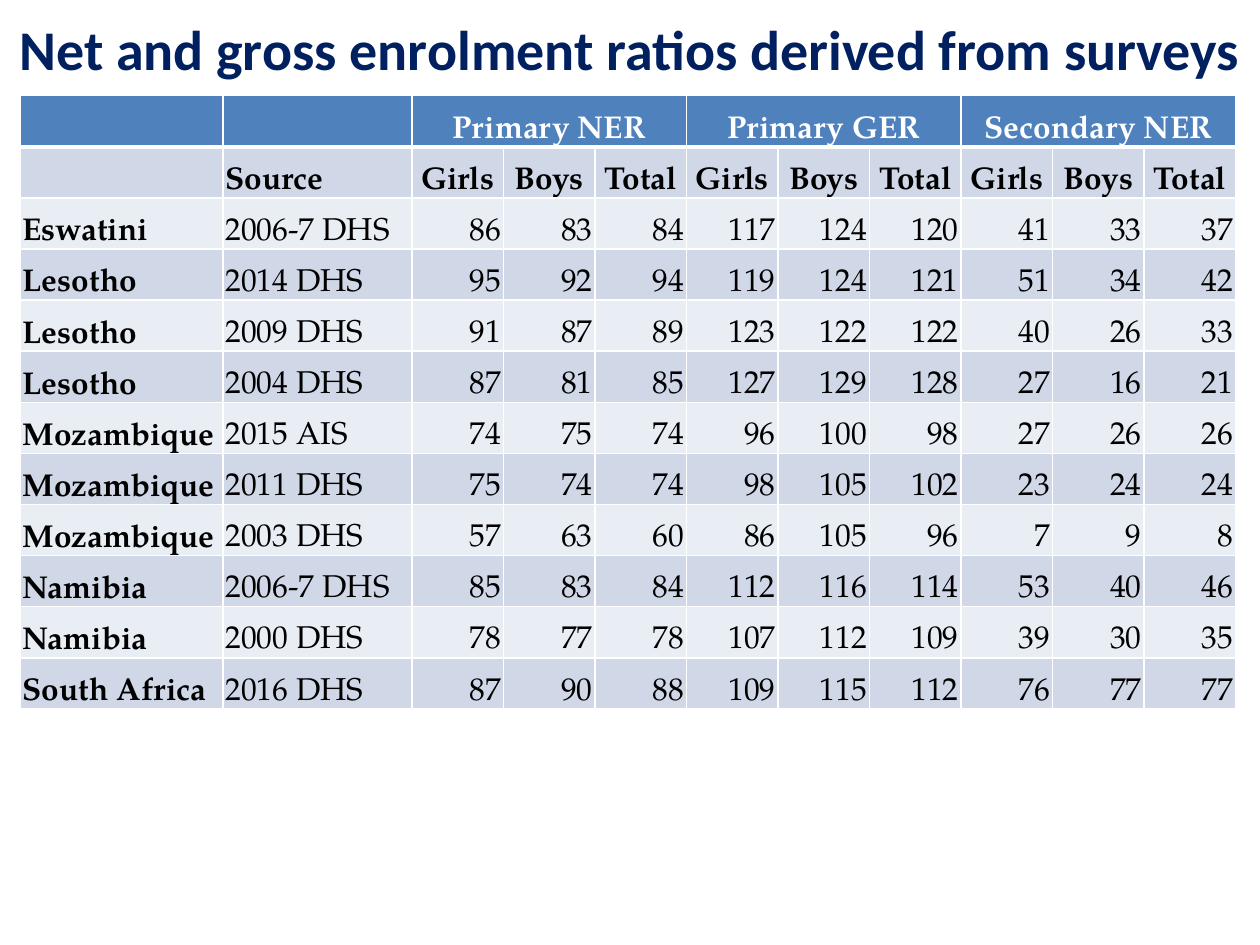
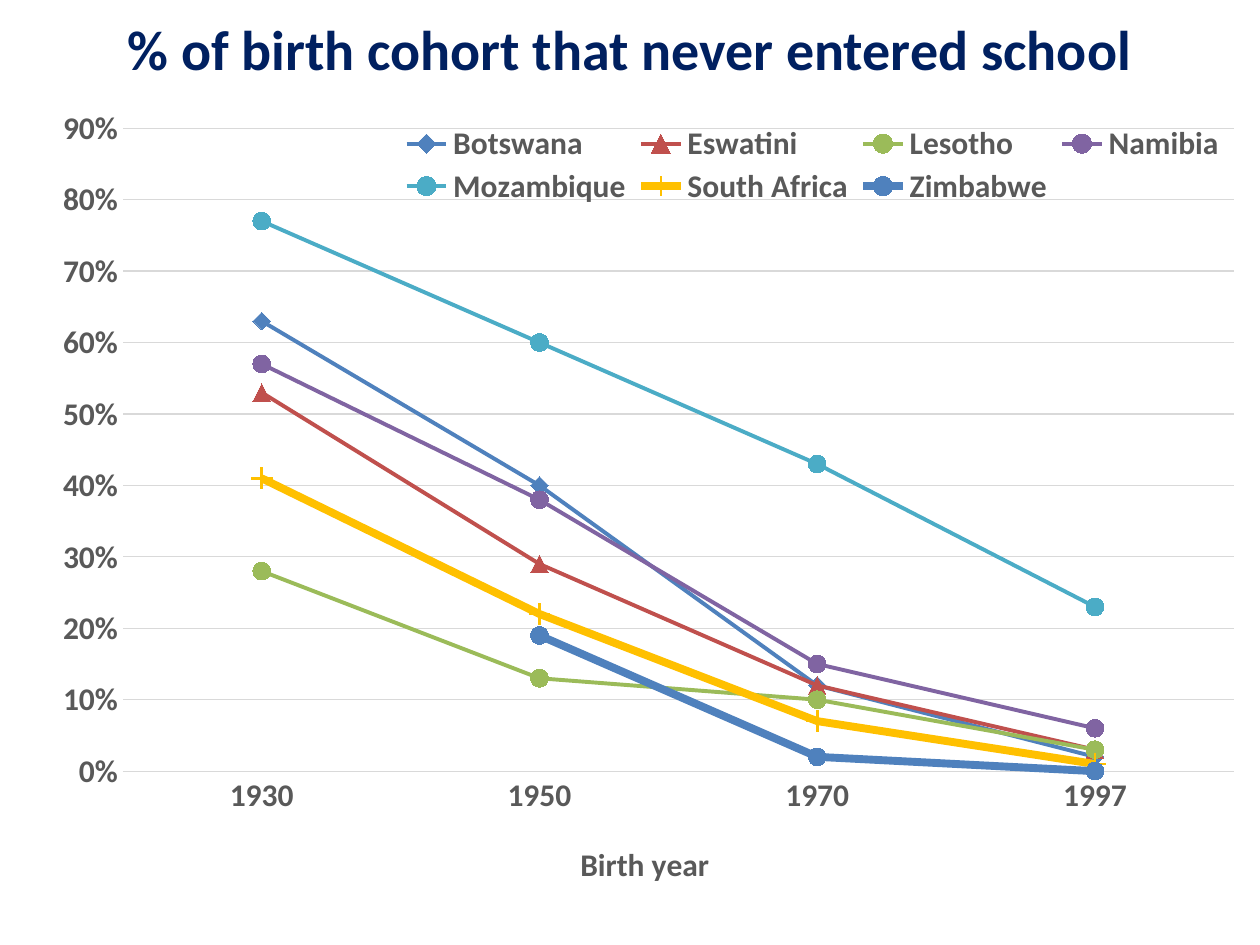
"""Build two slides on school enrolment and attendance in southern Africa."""
from typing import NamedTuple, Optional

from lxml.etree import SubElement
from pptx import Presentation
from pptx.chart.data import CategoryChartData
from pptx.dml.color import RGBColor
from pptx.enum.chart import (XL_CHART_TYPE as ChartType, XL_LEGEND_POSITION as LegendPos,
                             XL_MARKER_STYLE as Marker, XL_TICK_MARK as Tick)
from pptx.enum.text import MSO_ANCHOR as Anchor, PP_ALIGN as Align
from pptx.oxml import parse_xml
from pptx.oxml.ns import nsdecls, qn
from pptx.util import Inches, Pt

HEADING_FONT, TABLE_FONT = "Calibri", "TeX Gyre Pagella"
NAVY, WHITE, BLACK, GREY, PALE_GREY = "002060", "FFFFFF", "000000", "595959", "D9D9D9"
BLUE, BAND_DARK, BAND_LIGHT = "4F81BD", "D0D8E8", "E9EDF4"
BODY_SIZE = 18
TOP = 0.76


class SurveyRow(NamedTuple):
    country: str
    source: str
    ratios: tuple[int, ...]


class Cohort(NamedTuple):
    country: str
    shares: tuple[Optional[float], ...]
    color: str
    marker: Marker = Marker.CIRCLE
    width: float = 2.25
    marker_size: int = 10
    marker_fill: Optional[str] = None


INDICATORS = ("Primary NER", "Primary GER", "Secondary NER")
GROUPS = ("Girls", "Boys", "Total")
SURVEYS = (
    SurveyRow("Eswatini", "2006-7 DHS", (86, 83, 84, 117, 124, 120, 41, 33, 37)),
    SurveyRow("Lesotho", "2014 DHS", (95, 92, 94, 119, 124, 121, 51, 34, 42)),
    SurveyRow("Lesotho", "2009 DHS", (91, 87, 89, 123, 122, 122, 40, 26, 33)),
    SurveyRow("Lesotho", "2004 DHS", (87, 81, 85, 127, 129, 128, 27, 16, 21)),
    SurveyRow("Mozambique", "2015 AIS", (74, 75, 74, 96, 100, 98, 27, 26, 26)),
    SurveyRow("Mozambique", "2011 DHS", (75, 74, 74, 98, 105, 102, 23, 24, 24)),
    SurveyRow("Mozambique", "2003 DHS", (57, 63, 60, 86, 105, 96, 7, 9, 8)),
    SurveyRow("Namibia", "2006-7 DHS", (85, 83, 84, 112, 116, 114, 53, 40, 46)),
    SurveyRow("Namibia", "2000 DHS", (78, 77, 78, 107, 112, 109, 39, 30, 35)),
    SurveyRow("South Africa", "2016 DHS", (87, 90, 88, 109, 115, 112, 76, 77, 77)),
)
BIRTH_YEARS = ("1930", "1950", "1970", "1997")
COHORTS = (
    Cohort("Botswana", (0.63, 0.4, 0.12, 0.02), BLUE, Marker.DIAMOND),
    Cohort("Eswatini", (0.53, 0.29, 0.12, 0.03), "C0504D", Marker.TRIANGLE),
    Cohort("Lesotho", (0.28, 0.13, 0.1, 0.03), "9BBB59"),
    Cohort("Namibia", (0.57, 0.38, 0.15, 0.06), "8064A2"),
    Cohort("Mozambique", (0.77, 0.6, 0.43, 0.23), "4BACC6"),
    Cohort("South Africa", (0.41, 0.22, 0.07, 0.01), "FFC000", Marker.PLUS, 4.5, 12),
    Cohort("Zimbabwe", (None, 0.19, 0.02, 0), BLUE, width=4.5, marker_fill="2C4D75"),
)


def rgb(color: str) -> RGBColor:
    """Turn a hex string into a colour."""
    return RGBColor.from_string(color)


def style_font(font, name: str, size: float, color: str, bold: bool = True) -> None:
    """Set the face, size, colour and weight of a font."""
    font.name, font.size, font.bold = name, Pt(size), bold
    font.color.rgb = rgb(color)


def add_titled_slide(prs, title: str):
    """Add a blank slide with the shared title style."""
    s = prs.slides.add_slide(prs.slide_layouts[6])
    tf = s.shapes.add_textbox(0, 0, prs.slide_width, Inches(TOP)).text_frame
    tf.word_wrap, tf.vertical_anchor = True, Anchor.MIDDLE
    tf.margin_left = tf.margin_right = Inches(0.05)
    p = tf.paragraphs[0]
    p.alignment = Align.CENTER
    r = p.add_run()
    r.text = title
    style_font(r.font, HEADING_FONT, 32, NAVY)
    return s


def set_borders(cell, top: float, bottom: float) -> None:
    """Draw white borders round a cell, 1 pt wide at the sides."""
    tcPr = cell._tc.get_or_add_tcPr()
    for i, (side, width) in enumerate((("L", 1), ("R", 1), ("T", top), ("B", bottom))):
        ln = tcPr.makeelement(qn(f"a:ln{side}"), {"w": str(Pt(width))})
        SubElement(SubElement(ln, qn("a:solidFill")), qn("a:srgbClr"), val=WHITE)
        tcPr.insert(i, ln)


def write_cell(cell, text: str, color: str, bold: bool, align: Align) -> None:
    """Write one run of text into a table cell."""
    p = cell.text_frame.paragraphs[0]
    p.alignment = align
    r = p.add_run()
    r.text = text
    style_font(r.font, TABLE_FONT, BODY_SIZE, color, bold)


def add_enrolment_table(s) -> None:
    """Add the table of enrolment ratios by survey."""
    n_rows, n_ratios = len(SURVEYS) + 2, len(INDICATORS) * len(GROUPS)
    widths = [1.61, 1.5] + [6.54 / n_ratios] * n_ratios
    table = s.shapes.add_table(n_rows, len(widths), Inches(0.16), Inches(TOP),
                               Inches(sum(widths)), Inches(4.87)).table
    for column, width in zip(table.columns, widths):
        column.width = Inches(width)
    for i, row in enumerate(table.rows):
        row.height = Inches(4.87 / n_rows)
        fill = BLUE if i == 0 else BAND_DARK if i % 2 else BAND_LIGHT
        for cell in row.cells:
            cell.fill.solid()
            cell.fill.fore_color.rgb = rgb(fill)
            cell.vertical_anchor = Anchor.BOTTOM
            cell.margin_left = cell.margin_right = Inches(0.02)
            cell.margin_top = cell.margin_bottom = 0
            set_borders(cell, 3 if i == 1 else 1, 3 if i == 0 else 1)

    for i, indicator in enumerate(INDICATORS):
        first = 2 + i * len(GROUPS)
        table.cell(0, first).merge(table.cell(0, first + len(GROUPS) - 1))
        write_cell(table.cell(0, first), indicator, WHITE, True, Align.CENTER)
    write_cell(table.cell(1, 1), "Source", BLACK, True, Align.LEFT)
    for j, group in enumerate(GROUPS * len(INDICATORS), start=2):
        write_cell(table.cell(1, j), group, BLACK, True, Align.CENTER)
    for i, survey in enumerate(SURVEYS, start=2):
        write_cell(table.cell(i, 0), survey.country, BLACK, True, Align.LEFT)
        write_cell(table.cell(i, 1), survey.source, BLACK, False, Align.LEFT)
        for j, ratio in enumerate(survey.ratios, start=2):
            write_cell(table.cell(i, j), str(ratio), BLACK, False, Align.RIGHT)


def place(element, index: int, inner: bool = False, **box: float) -> None:
    """Give a chart part a manual layout in fractions of the chart."""
    for old in element.findall(qn("c:layout")):
        element.remove(old)
    target = '<c:layoutTarget val="inner"/>' if inner else ""
    modes = "".join(f'<c:{k}Mode val="edge"/>' for k in box if k in "xy")
    values = "".join(f'<c:{k} val="{v}"/>' for k, v in box.items())
    element.insert(index, parse_xml(
        f'<c:layout {nsdecls("c")}><c:manualLayout>{target}{modes}{values}'
        "</c:manualLayout></c:layout>"))


def style_line(line, color: str, width: float) -> None:
    """Set the colour and width of a line."""
    line.color.rgb = rgb(color)
    line.width = Pt(width)


def style_series(series, cohort: Cohort) -> None:
    """Style the line and markers of one country."""
    series.smooth = False
    style_line(series.format.line, cohort.color, cohort.width)
    marker = series.marker
    marker.style, marker.size = cohort.marker, cohort.marker_size
    style_line(marker.format.line, cohort.color, 0.75)
    if cohort.marker == Marker.PLUS:
        marker.format.fill.background()
    else:
        marker.format.fill.solid()
        marker.format.fill.fore_color.rgb = rgb(cohort.marker_fill or cohort.color)


def add_cohort_chart(s) -> None:
    """Add the line chart of cohorts that never entered school."""
    data = CategoryChartData(number_format="0%")
    data.categories = BIRTH_YEARS
    for cohort in COHORTS:
        data.add_series(cohort.country, cohort.shares)
    chart = s.shapes.add_chart(ChartType.LINE_MARKERS, Inches(0.2), Inches(TOP),
                               Inches(9.69), Inches(6.46), data).chart
    chart.has_title = False
    style_font(chart.font, HEADING_FONT, BODY_SIZE, BLACK)
    chart.plots[0].vary_by_categories = False
    for series, cohort in zip(chart.plots[0].series, COHORTS):
        style_series(series, cohort)

    years, shares = chart.category_axis, chart.value_axis
    for axis in (years, shares):
        axis.major_tick_mark = axis.minor_tick_mark = Tick.NONE
        style_font(axis.tick_labels.font, HEADING_FONT, BODY_SIZE, GREY)
    style_line(years.format.line, PALE_GREY, 0.75)
    r = years.axis_title.text_frame.paragraphs[0].add_run()
    r.text = "Birth year"
    style_font(r.font, HEADING_FONT, BODY_SIZE, GREY)
    shares.minimum_scale, shares.maximum_scale, shares.major_unit = 0, 0.9, 0.1
    shares.tick_labels.number_format = "0%"
    shares.tick_labels.number_format_is_linked = False
    shares.format.line.fill.background()
    style_line(shares.major_gridlines.format.line, PALE_GREY, 0.75)

    chart.has_legend = True
    chart.legend.position = LegendPos.BOTTOM
    chart.legend.include_in_layout = False
    style_font(chart.legend.font, HEADING_FONT, BODY_SIZE, GREY)

    root = chart.element
    place(root.xpath("//c:plotArea")[0], 0, inner=True, x=0.08, y=0.04, w=0.91, h=0.79)
    place(root.xpath("//c:legend")[0], 1, x=0.3, y=0.03, w=0.69, h=0.11)
    place(root.xpath("//c:catAx/c:title")[0], 1, x=0.45, y=0.91)


def main() -> None:
    """Build and save the presentation."""
    prs = Presentation()
    prs.slide_width, prs.slide_height = Inches(10), Inches(7.5)
    add_enrolment_table(
        add_titled_slide(prs, "Net and gross enrolment ratios derived from surveys"))
    add_cohort_chart(add_titled_slide(prs, "% of birth cohort that never entered school"))
    prs.save("out.pptx")


if __name__ == "__main__":
    main()
